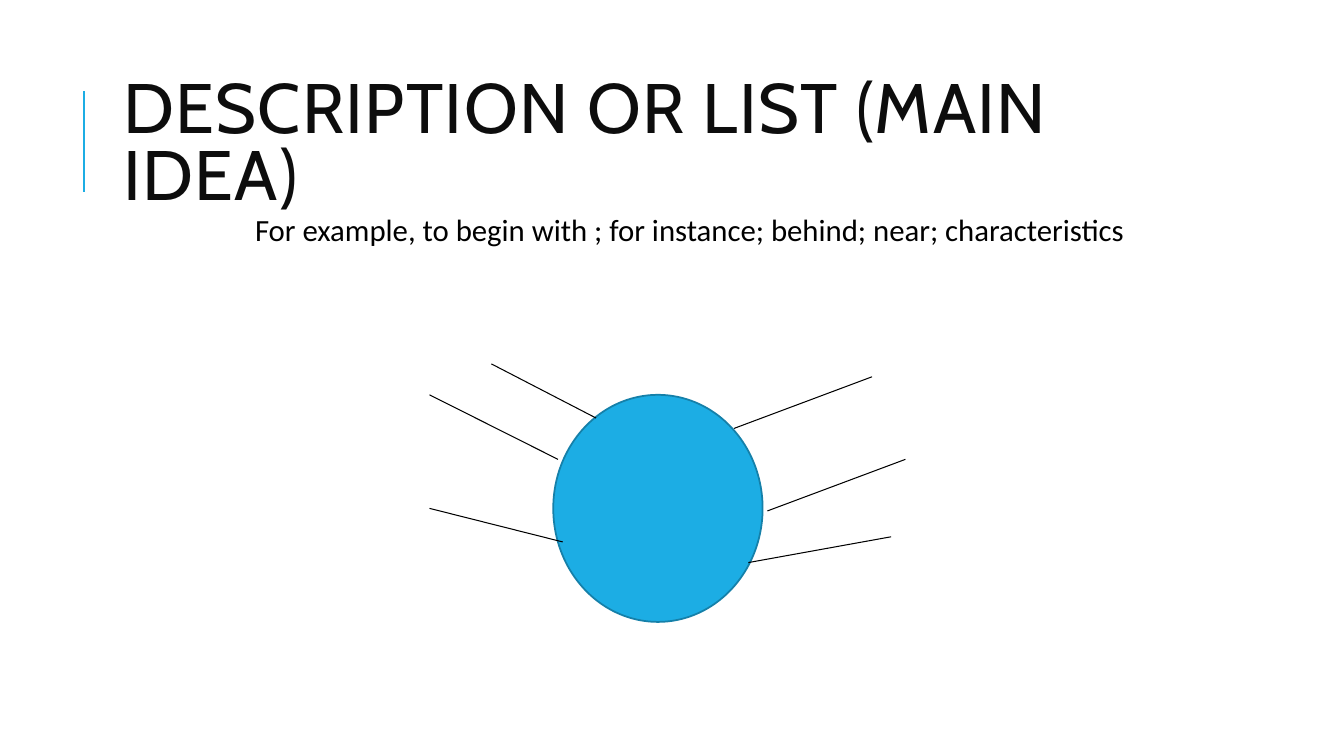
import dataclasses

import pptx
import pptx.dml.color
import pptx.enum.shapes
import pptx.enum.text
import pptx.oxml.ns
import pptx.util
from lxml import etree

BLUE, DARK_BLUE, BLACK, NEAR_BLACK = "1CADE4", "1580A9", "000000", "0D0D0D"
TITLE = "DESCRIPTION OR LIST (MAIN IDEA)"
SIGNAL_WORDS = "For example, to begin with ; for instance; behind; near; characteristics"

# Start and end of each spoke, as shares of the idea map's box
SPOKES = [
    ((0.64, 0.25), (0.93, 0.05)),
    ((0.71, 0.57), (1, 0.37)),
    ((0.67, 0.77), (0.97, 0.67)),
    ((0, 0.12), (0.27, 0.37)),
    ((0, 0.56), (0.28, 0.69)),
    ((0.13, 0), (0.35, 0.21)),
]


@dataclasses.dataclass
class Box:
    left: float
    top: float
    width: float
    height: float

    def point(self, across, down):
        """Turn shares of the box into a position on the slide."""
        return (pptx.util.Inches(self.left + across * self.width),
                pptx.util.Inches(self.top + down * self.height))

    def size(self):
        return pptx.util.Inches(self.width), pptx.util.Inches(self.height)

    def inner_box(self, across, down, width, height):
        return Box(self.left + across * self.width, self.top + down * self.height,
                   width * self.width, height * self.height)


def color(hex_text):
    return pptx.dml.color.RGBColor.from_string(hex_text)


def write(frame, text, *, font, size, hue, line_spacing, before=0, after=0,
          indent=0, tracking=0):
    frame.word_wrap = True
    frame.auto_size = pptx.enum.text.MSO_AUTO_SIZE.NONE
    para = frame.paragraphs[0]
    para.alignment = pptx.enum.text.PP_ALIGN.LEFT
    para.line_spacing = line_spacing
    para.space_before = pptx.util.Pt(before)
    para.space_after = pptx.util.Pt(after)
    properties = para._p.get_or_add_pPr()
    properties.set("marL", str(pptx.util.Inches(indent)))
    properties.set("indent", "0")
    span = para.add_run()
    span.text = text
    span.font.name = font
    span.font.size = pptx.util.Pt(size)
    span.font.color.rgb = color(hue)
    span._r.get_or_add_rPr().set("spc", str(tracking * 100))


def add_line(page, start, end, hue, weight):
    line = page.shapes.add_connector(
        pptx.enum.shapes.MSO_CONNECTOR.STRAIGHT, *start, *end)
    line.line.color.rgb = color(hue)
    line.line.width = pptx.util.Pt(weight)
    etree.SubElement(line._element.spPr, pptx.oxml.ns.qn("a:effectLst"))


def add_heading(page, box):
    rule = Box(box.left - 0.29, box.top + 0.26, 0, 1)
    add_line(page, rule.point(0, 1), rule.point(0, 0), BLUE, 1.5)
    title = page.shapes.title
    title.left, title.top = box.point(0, 0)
    title.width, title.height = box.size()
    title.text_frame.vertical_anchor = pptx.enum.text.MSO_ANCHOR.MIDDLE
    write(title.text_frame, TITLE, font="Cabin", size=50, hue=NEAR_BLACK,
          line_spacing=0.8, tracking=1)


def add_signal_words(page, box):
    frame = page.shapes.add_textbox(*box.point(0, 0), *box.size()).text_frame
    frame.margin_left = frame.margin_right = pptx.util.Inches(0.05)
    frame.margin_top = frame.margin_bottom = pptx.util.Inches(0.05)
    write(frame, SIGNAL_WORDS, font="Calibri", size=22, hue=BLACK,
          line_spacing=0.9, before=12, after=2, indent=0.1)


def add_idea_map(page, box):
    hub_box = box.inner_box(0.26, 0.12, 0.44, 0.88)
    hub = page.shapes.add_shape(
        pptx.enum.shapes.MSO_SHAPE.FLOWCHART_CONNECTOR,
        *hub_box.point(0, 0), *hub_box.size())
    hub.shadow.inherit = False
    hub.fill.solid()
    hub.fill.fore_color.rgb = color(BLUE)
    hub.line.color.rgb = color(DARK_BLUE)
    hub.line.width = pptx.util.Pt(1.25)
    for start, end in SPOKES:
        add_line(page, box.point(*start), box.point(*end), BLACK, 0.75)


def main():
    deck = pptx.Presentation()
    deck.slide_width, deck.slide_height = Box(0, 0, 13.33, 7.5).size()
    page = deck.slides.add_slide(deck.slide_layouts.get_by_name("Title Only"))
    add_heading(page, Box(1.12, 0.64, 10.63, 1.64))
    add_signal_words(page, Box(2.38, 2.08, 9, 4.95))
    add_idea_map(page, Box(4.26, 3.61, 4.72, 2.56))
    deck.save("out.pptx")


if __name__ == "__main__":
    main()
